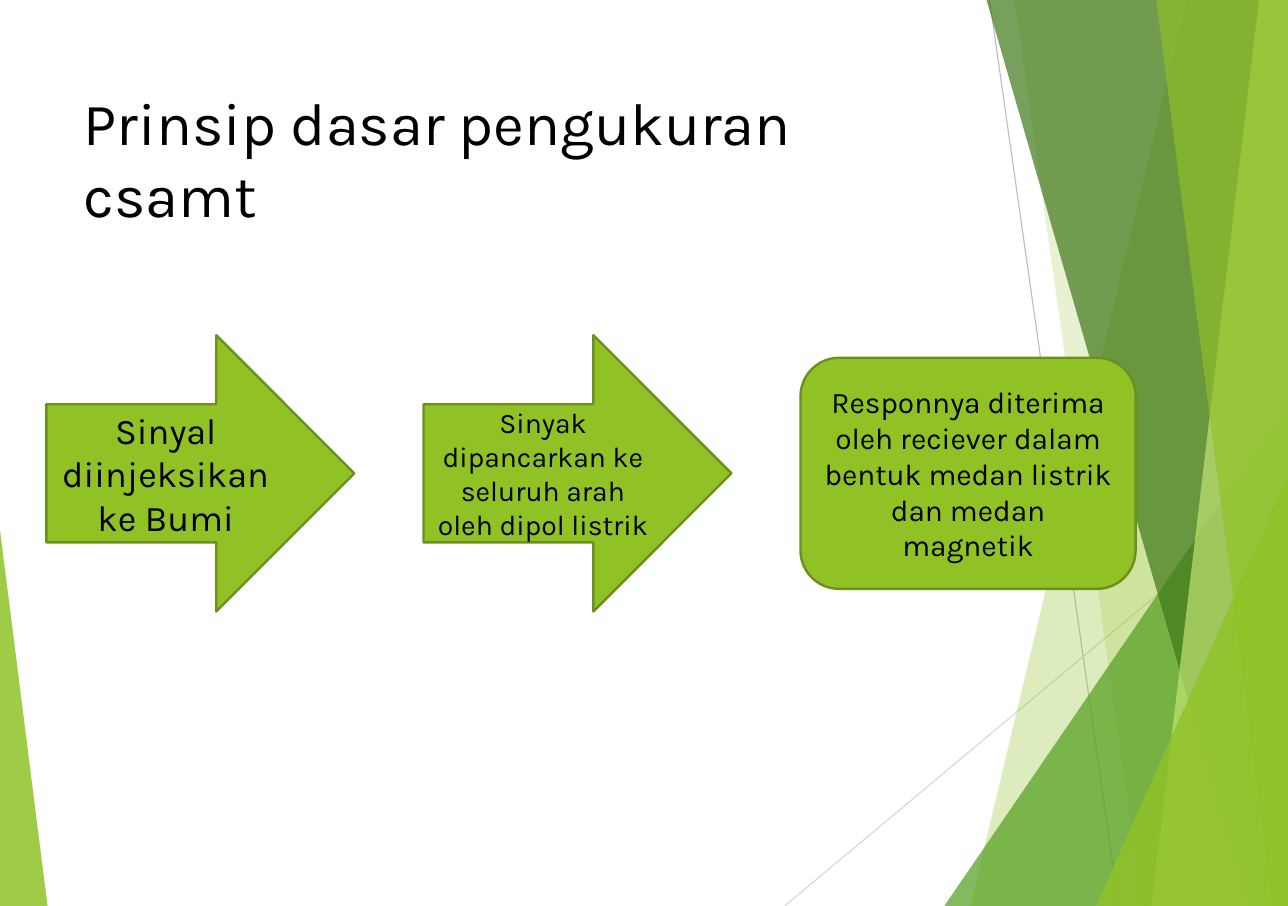
from lxml import etree
from pptx import Presentation
from pptx.dml.color import RGBColor
from pptx.enum import shapes, text
from pptx.oxml.ns import qn
from pptx.util import Inches, Pt

WIDTH, HEIGHT = 11 + 3 / 8, 8
LIME = "90C226"


def paint(color_format, color, opacity=100):
    """Set a solid colour, with opacity in percent."""
    color_format.rgb = RGBColor.from_string(color)
    if opacity < 100:
        node = color_format._xFill.find(qn("a:srgbClr"))
        etree.SubElement(node, qn("a:alpha"), val=str(opacity * 1000))


def write(shape, words, size, **frame_format):
    frame = shape.text_frame
    for name, value in frame_format.items():
        setattr(frame, name, value)
    frame.word_wrap = True
    frame.margin_left = frame.margin_right = Inches(0.11)
    span = frame.paragraphs[0].add_run()
    span.text = words
    span.font.name = "Karla"
    span.font.size = Pt(size)
    paint(span.font.color, "000000")


deck = Presentation()
deck.slide_width, deck.slide_height = Inches(WIDTH), Inches(HEIGHT)
page = deck.slides.add_slide(deck.slide_layouts[6])

# Thin crossing lines
for start, end, color in [
    ((8.74, 0), (9.88, 8), "BFBFBF"),
    ((11.37, 4.29), (6.93, 8), "D9D9D9"),
]:
    line = page.shapes.add_connector(
        shapes.MSO_CONNECTOR.STRAIGHT, *map(Inches, start + end))
    line.line.width = Pt(0.75)
    line.line.fill.solid()
    paint(line.line.color, color)
    etree.SubElement(line._element.spPr, qn("a:effectLst"))

# Translucent facets, back to front: bands give the x of their slanted left
# edge at top and bottom, triangles give left, top, width and apex position
for kind, geometry, color, opacity in [
    ("band", (10.48, 8.57), LIME, 30),
    ("band", (8.96, 10.09), LIME, 20),
    ("triangle", (8.34, 3.56, 3.04, 1), "54A021", 72),
    ("band", (8.71, 11.02), "3F7819", 70),
    ("band", (11.12, 10.17), "C0E474", 70),
    ("band", (10.21, 11.24), LIME, 65),
    ("triangle", (9.68, 4.19, 1.7, 1), LIME, 80),
    ("triangle", (0, 4.68, 0.42, 0), LIME, 85),
]:
    if kind == "band":
        top_x, bottom_x = geometry
        outline = page.shapes.build_freeform(
            Inches(top_x), Inches(-0.01), scale=1.0)
        outline.add_line_segments([
            (Inches(x), Inches(y))
            for x, y in [(WIDTH, -0.01), (WIDTH, HEIGHT), (bottom_x, HEIGHT)]
        ])
        facet = outline.convert_to_shape()
    else:
        left, top, width, apex = geometry
        facet = page.shapes.add_shape(
            shapes.MSO_SHAPE.ISOSCELES_TRIANGLE,
            *map(Inches, (left, top, width, HEIGHT - top)))
        facet.adjustments[0] = apex
    facet.shadow.inherit = False
    facet.line.fill.background()
    facet.fill.solid()
    paint(facet.fill.fore_color, color, opacity)

title = page.shapes.add_textbox(*map(Inches, (0.63, 0.71, 8.02, 1.54)))
write(title, "Prinsip dasar pengukuran csamt", 38,
      vertical_anchor=text.MSO_ANCHOR.TOP)

# Process steps, equally spaced and centred on one axis
AXIS = 4.18
ARROW = shapes.MSO_SHAPE.RIGHT_ARROW
for index, (preset, width, height, size, words) in enumerate([
    (ARROW, 2.72, 2.44, 23, "Sinyal diinjeksikan ke Bumi"),
    (ARROW, 2.72, 2.44, 18,
     "Sinyak dipancarkan ke seluruh arah oleh dipol listrik"),
    (shapes.MSO_SHAPE.ROUNDED_RECTANGLE, 2.96, 2.04, 19,
     "Responnya diterima oleh reciever dalam bentuk medan listrik "
     "dan medan magnetik"),
]):
    step = page.shapes.add_shape(preset, *map(
        Inches, (0.41 + 3.33 * index, AXIS - height / 2, width, height)))
    step.shadow.inherit = False
    step.fill.solid()
    paint(step.fill.fore_color, LIME)
    step.line.width = Pt(1.5)
    step.line.fill.solid()
    paint(step.line.color, "6B901C")
    write(step, words, size, vertical_anchor=text.MSO_ANCHOR.MIDDLE,
          margin_top=Inches(0.06), margin_bottom=Inches(0.06))
    step.text_frame.paragraphs[0].alignment = text.PP_ALIGN.CENTER

deck.save("out.pptx")
